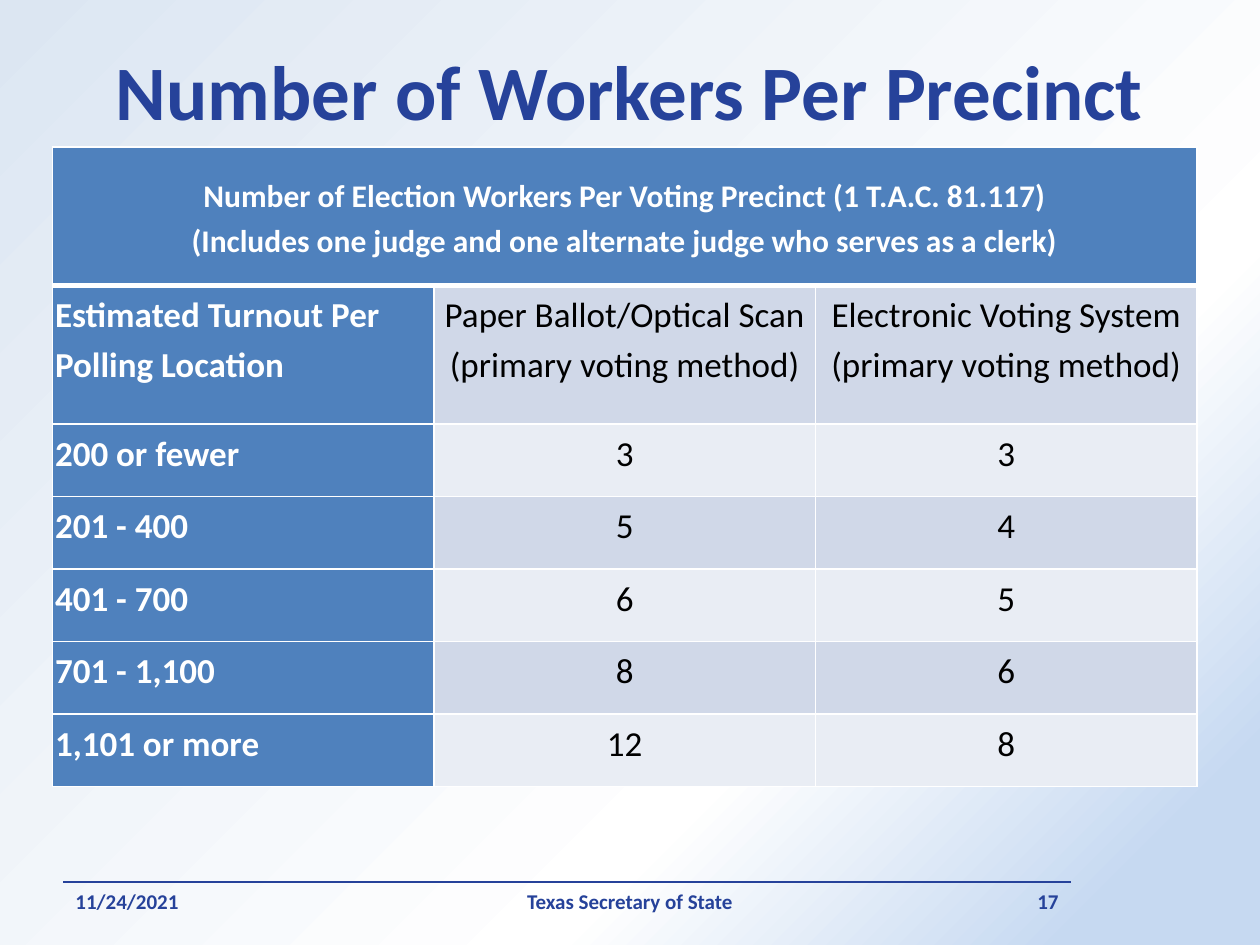
import copy

import pptx
import pptx.dml.color
import pptx.enum.shapes
import pptx.enum.text
import pptx.oxml
import pptx.oxml.ns
import pptx.util

Pt = pptx.util.Pt
ALIGN = pptx.enum.text.PP_ALIGN
MIDDLE = pptx.enum.text.MSO_ANCHOR.MIDDLE
NAVY, BLUE, WHITE, BLACK = "26429A", "4F81BD", "FFFFFF", "000000"
BANDS = ("D0D8E8", "E9EDF4")
HEADING = [
    "Number of Election Workers Per Voting Precinct (1 T.A.C. 81.117)",
    "(Includes one judge and one alternate judge who serves as a clerk)",
]
METHOD = "(primary voting method)"
ROWS = [
    ("Estimated Turnout Per Polling Location",
     f"Paper Ballot/Optical Scan\n{METHOD}", f"Electronic Voting System\n{METHOD}"),
    ("200 or fewer", "3", "3"),
    ("201 - 400", "5", "4"),
    ("401 - 700", "6", "5"),
    ("701 - 1,100", "8", "6"),
    ("1,101 or more", "12", "8"),
]


def color(value):
    """Turn a hex string into a colour."""
    return pptx.dml.color.RGBColor.from_string(value)


def write(text_frame, text, size, ink, bold, alignment, spacing=None):
    """Fill a text frame and format all its runs."""
    text_frame.text = text
    for paragraph in text_frame.paragraphs:
        paragraph.alignment = alignment
        paragraph.line_spacing = spacing
        for run in paragraph.runs:
            run.font.name = "Calibri"
            run.font.size = Pt(size)
            run.font.bold = bold
            run.font.color.rgb = color(ink)


def paint_background(slide, stops, angle):
    """Fill the slide background with a linear gradient."""
    fill = slide.background.fill
    fill.gradient()
    fill.gradient_angle = 360 - angle
    stop_list = slide.element.find(".//" + pptx.oxml.ns.qn("a:gsLst"))
    while len(stop_list) < len(stops):
        stop_list.append(copy.deepcopy(stop_list[-1]))
    for stop, (position, value) in zip(fill.gradient_stops, stops):
        stop.position = position
        stop.color.rgb = color(value)


def place_title(slide, left, top, width, height):
    """Place the title placeholder in its box."""
    title = slide.shapes.title
    title.left, title.top, title.width, title.height = map(Pt, (left, top, width, height))
    title.text_frame.vertical_anchor = MIDDLE
    write(title.text_frame, "Number of Workers Per Precinct", 44, NAVY, True, ALIGN.CENTER)


def set_borders(cell, top=1, bottom=1):
    """Draw white borders around a cell."""
    properties = cell._tc.get_or_add_tcPr()
    for side, width in (("L", 1), ("R", 1), ("T", top), ("B", bottom)):
        properties.append(pptx.oxml.parse_xml(
            f'<a:ln{side} {pptx.oxml.ns.nsdecls("a")} w="{Pt(width)}"><a:solidFill>'
            f'<a:srgbClr val="{WHITE}"/></a:solidFill></a:ln{side}>'))


def style_cell(cell, fill, top=1, bottom=1):
    """Set a cell's borders, fill and margins."""
    set_borders(cell, top, bottom)
    cell.fill.solid()
    cell.fill.fore_color.rgb = color(fill)
    cell.margin_left = cell.margin_right = cell.margin_top = cell.margin_bottom = Pt(1.5)


def place_table(slide, left, top, width, tall_row, short_row):
    """Place the table of workers by turnout and voting method."""
    heights = [tall_row] * 2 + [short_row] * (len(ROWS) - 1)
    table = slide.shapes.add_table(
        len(heights), 3, Pt(left), Pt(top), Pt(width), Pt(sum(heights))).table
    for row, height in zip(table.rows, heights):
        row.height = Pt(height)
    for column in table.columns:
        column.width = Pt(width / 3)
    for column in range(3):
        style_cell(table.cell(0, column), BLUE, bottom=3)
    heading = table.cell(0, 0)
    heading.merge(table.cell(0, 2))
    heading.vertical_anchor = MIDDLE
    write(heading.text_frame, "\n".join(HEADING), 18, WHITE, True, ALIGN.CENTER, 1.15)
    for index, values in enumerate(ROWS):
        for column, text in enumerate(values):
            cell = table.cell(index + 1, column)
            label = column == 0
            style_cell(cell, BLUE if label else BANDS[index % 2], top=1 if index else 3)
            write(cell.text_frame, text, 20, WHITE if label else BLACK, label,
                  ALIGN.LEFT if label else ALIGN.CENTER, 1.15)


def place_footer(slide, left, top, width, height):
    """Place the footer rule with date, owner and slide number."""
    rule = slide.shapes.add_connector(
        pptx.enum.shapes.MSO_CONNECTOR.STRAIGHT,
        Pt(left), Pt(top + 3.6), Pt(left + width), Pt(top + 3.6))
    rule.line.color.rgb = color(NAVY)
    rule.line.width = Pt(0.75)
    rule._element.spPr.append(
        pptx.oxml.parse_xml(f'<a:effectLst {pptx.oxml.ns.nsdecls("a")}/>'))
    parts = [
        ("11/24/2021", 0, 168, ALIGN.LEFT),
        ("Texas Secretary of State", 210, 228, ALIGN.CENTER),
        ("17", width - 84, 84, ALIGN.RIGHT),
    ]
    for text, offset, part_width, alignment in parts:
        box = slide.shapes.add_textbox(Pt(left + offset), Pt(top), Pt(part_width), Pt(height))
        box.text_frame.word_wrap = True
        box.text_frame.vertical_anchor = MIDDLE
        write(box.text_frame, text, 12, NAVY, True, alignment)


def main():
    """Build and save the slide."""
    presentation = pptx.Presentation()
    presentation.slide_width, presentation.slide_height = Pt(720), Pt(540)
    slide = presentation.slides.add_slide(presentation.slide_layouts[5])
    paint_background(slide, [(0, "DCE6F2"), (0.68, WHITE), (0.91, "C6D9F1")], 45)
    place_title(slide, 36, 6, 648, 90)
    place_table(slide, 30, 84, 654, 79.2, 41.4)
    place_footer(slide, 36, 500.4, 576, 28.8)
    presentation.save("out.pptx")


if __name__ == "__main__":
    main()
